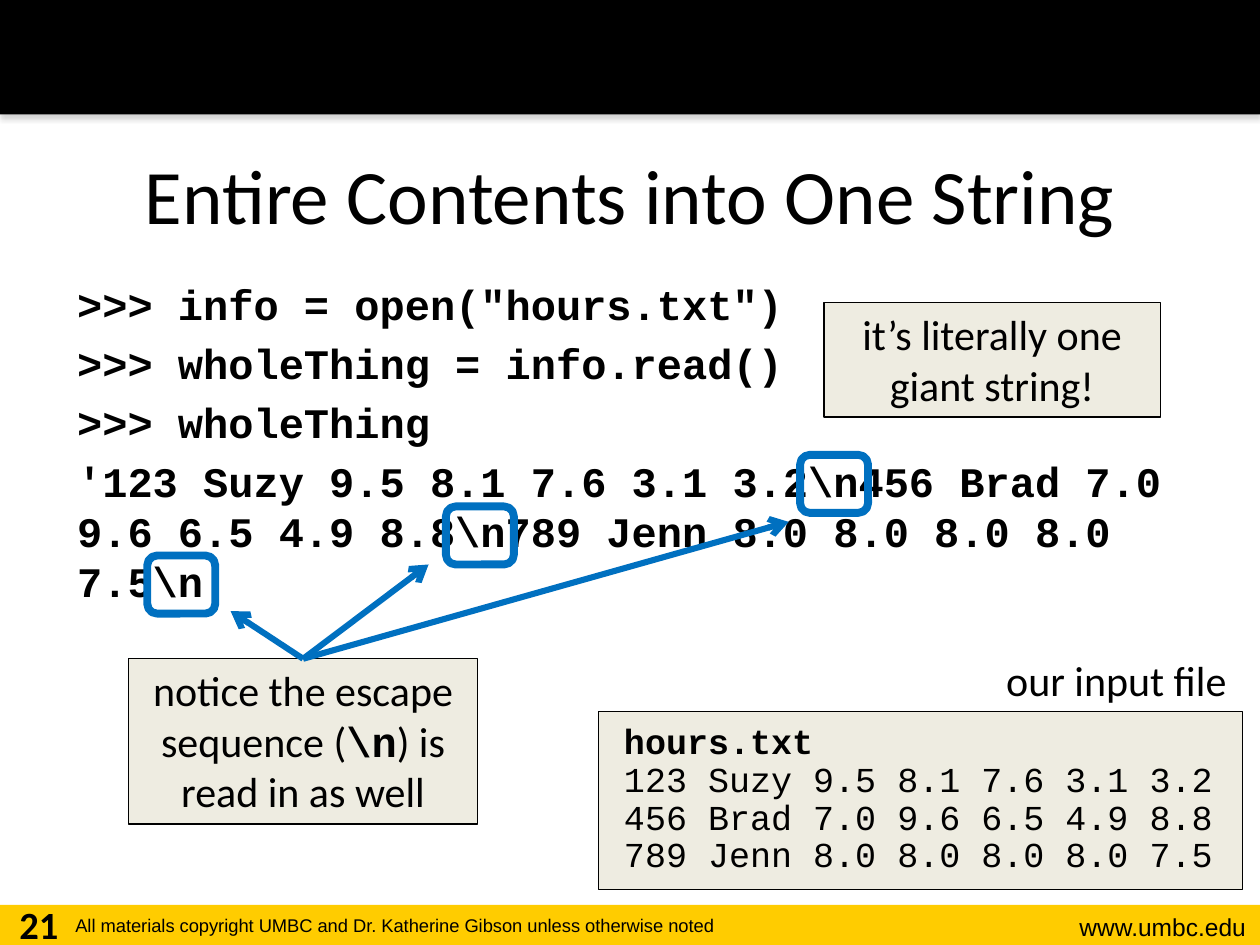
from lxml.etree import SubElement
from pptx import Presentation
from pptx.dml.color import RGBColor
from pptx.enum.shapes import MSO_CONNECTOR, MSO_SHAPE
from pptx.enum.text import MSO_ANCHOR, PP_ALIGN as Align
from pptx.oxml import parse_xml
from pptx.oxml.ns import nsdecls, qn
from pptx.util import Cm, Pt

BLACK, GOLD, CREAM, BLUE = "000000", "FFCC00", "EEECE1", "0070C0"
CODE_FONT = "Courier New"
CONSOLE = [
    '>>> info = open("hours.txt")',
    ">>> wholeThing = info.read()",
    ">>> wholeThing",
    r"'123 Suzy 9.5 8.1 7.6 3.1 3.2\n456 Brad 7.0 9.6 6.5 4.9 8.8"
    r"\n789 Jenn 8.0 8.0 8.0 8.0 7.5\n'",
]
HOURS = [
    "hours.txt",
    "123 Suzy 9.5 8.1 7.6 3.1 3.2",
    "456 Brad 7.0 9.6 6.5 4.9 8.8",
    "789 Jenn 8.0 8.0 8.0 8.0 7.5",
]


def color(hex_code):
    """Turn a hex string into a colour."""
    return RGBColor.from_string(hex_code)


def lengths(box):
    """Turn a box given in centimetres into lengths."""
    return [Cm(value) for value in box]


def style(paragraph, size, name="Calibri", bold=False, align=None):
    """Set the font and alignment of a paragraph."""
    font = paragraph.font
    font.size, font.name, font.bold = Pt(size), name, bold
    font.color.rgb = color(BLACK)
    paragraph.alignment = align


def add_panel(slide, box, fill=None, line=None, width=0.75, kind=MSO_SHAPE.RECTANGLE):
    """Add a flat shape with an optional fill and outline."""
    panel = slide.shapes.add_shape(kind, *lengths(box))
    panel.shadow.inherit = False
    if fill:
        panel.fill.solid()
        panel.fill.fore_color.rgb = color(fill)
    else:
        panel.fill.background()
    if line:
        panel.line.color.rgb = color(line)
        panel.line.width = Pt(width)
    else:
        panel.line.fill.background()
    return panel


def add_label(slide, box, text, size, name="Calibri", bold=False, align=None):
    """Add a one-paragraph text box."""
    frame = slide.shapes.add_textbox(*lengths(box)).text_frame
    frame.word_wrap = True
    frame.text = text
    style(frame.paragraphs[0], size, name, bold, align)


def add_header(slide, box):
    """Add the black band with its soft shadow below."""
    band = add_panel(slide, box, BLACK)
    effects = band._element.spPr.find(qn("a:effectLst"))
    effects.append(parse_xml(
        f'<a:outerShdw {nsdecls("a")} blurRad="39370" dist="22860" dir="5400000">'
        '<a:srgbClr val="808080"><a:alpha val="35000"/></a:srgbClr></a:outerShdw>'))


def add_footer(slide, box):
    """Add the gold band with page number, copyright and address."""
    left, top, width, height = box
    add_panel(slide, box, GOLD)
    add_label(slide, (left + width - 5.08, top + 0.02, 5.05, 0.86),
              "www.umbc.edu", 14, "Arial", align=Align.RIGHT)
    add_label(slide, (left + 1.27, top + 0.07, 16.66, 0.74),
              "All materials copyright UMBC and Dr. Katherine Gibson unless otherwise noted",
              10.5, "Arial")
    add_label(slide, (left, top - 0.21, 1.57, 1.02), "21", 22, bold=True, align=Align.CENTER)


def place(placeholder, box):
    """Move a placeholder to a box."""
    placeholder.left, placeholder.top, placeholder.width, placeholder.height = lengths(box)


def fill_title(slide, box):
    """Place and fill the title."""
    title = slide.shapes.title
    place(title, box)
    title.text_frame.text = "Entire Contents into One String"
    style(title.text_frame.paragraphs[0], 44, align=Align.CENTER)


def fill_console(slide, box):
    """Place the interpreter session in the body placeholder."""
    body = slide.placeholders[1]
    place(body, box)
    body.text_frame.text = "\n".join(CONSOLE)
    for paragraph in body.text_frame.paragraphs:
        properties = paragraph._p.get_or_add_pPr()
        properties.set("marL", str(Cm(0.03)))
        properties.set("indent", "0")
        SubElement(properties, qn("a:buNone"))
        style(paragraph, 24, CODE_FONT, bold=True)


def add_callout(slide, box, pieces):
    """Add a cream note whose pieces alternate between prose and code."""
    frame = add_panel(slide, box, CREAM, BLACK).text_frame
    frame.word_wrap = True
    frame.vertical_anchor = MSO_ANCHOR.TOP
    paragraph = frame.paragraphs[0]
    style(paragraph, 24, align=Align.CENTER)
    for index, piece in enumerate(pieces):
        run = paragraph.add_run()
        run.text = piece
        if index % 2:
            run.font.name, run.font.bold = CODE_FONT, True


def add_arrow(slide, start, end):
    """Add a blue arrow between two points."""
    arrow = slide.shapes.add_connector(MSO_CONNECTOR.STRAIGHT, *lengths(start + end))
    arrow.line.color.rgb = color(BLUE)
    arrow.line.width = Pt(3.5)
    SubElement(arrow.line._get_or_add_ln(), qn("a:tailEnd"), type="arrow")
    SubElement(arrow._element.spPr, qn("a:effectLst"))


def add_escape_note(slide, box):
    """Add the escape sequence note, its arrows and the ringed newlines."""
    left, top, width, _ = box
    add_callout(slide, box, ["notice the escape sequence (", r"\n", ") is read in as well"])
    for dx, dy in [(-1.46, -0.96), (9.79, -2.76), (2.53, -1.9)]:
        start = (left + width / 2, top)
        add_arrow(slide, start, (start[0] + dx, start[1] + dy))
    for dx, dy in [(6.4, -3.07), (13.54, -4.11), (0.38, -2.08)]:
        add_panel(slide, (left + dx, top + dy, 1.37, 1.17), line=BLUE, width=4.5,
                  kind=MSO_SHAPE.ROUNDED_RECTANGLE)


def add_input_file(slide, box):
    """Add the listing of the input file with its caption above."""
    left, top, width, _ = box
    add_label(slide, (left + width - 5.06, top - 1.29, 5.03, 1.27),
              "our input file", 24, align=Align.CENTER)
    frame = add_panel(slide, box, CREAM, BLACK).text_frame
    frame.word_wrap = True
    frame.vertical_anchor = MSO_ANCHOR.TOP
    frame.margin_left = frame.margin_right = Cm(0.51)
    frame.margin_top = frame.margin_bottom = Cm(0.25)
    frame.text = "\n".join(HOURS)
    for index, paragraph in enumerate(frame.paragraphs):
        style(paragraph, 20, CODE_FONT, bold=index == 0, align=Align.LEFT)
        paragraph.line_spacing = 0.9


def main():
    """Build and save the slide."""
    deck = Presentation()
    deck.slide_width, deck.slide_height = Cm(25.4), Cm(19.05)
    slide = deck.slides.add_slide(deck.slide_layouts[1])
    add_footer(slide, (0, 18.24, 25.4, 0.81))
    add_header(slide, (0, 0, 25.4, 2.31))
    fill_title(slide, (1.27, 2.31, 22.86, 3.18))
    fill_console(slide, (1.27, 5.49, 22.86, 12.55))
    add_escape_note(slide, (2.59, 13.28, 7.04, 3.33))
    add_callout(slide, (16.61, 6.1, 6.78, 2.31), ["it’s literally one giant string!"])
    add_input_file(slide, (12.07, 14.35, 12.98, 3.58))
    deck.save("out.pptx")


if __name__ == "__main__":
    main()
